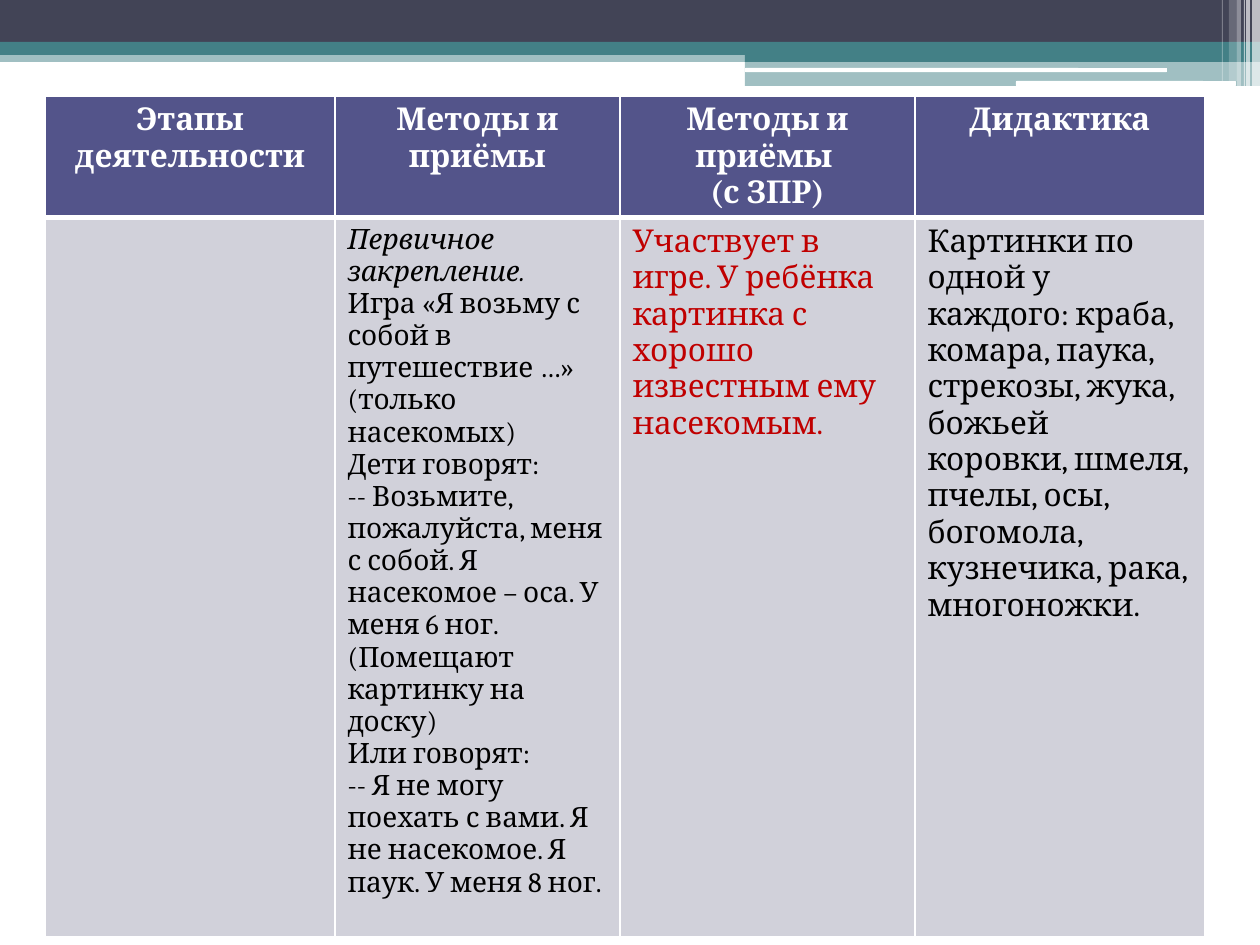
import pptx
import pptx.dml.color
import pptx.enum.shapes
import pptx.enum.text
import pptx.oxml.ns
import pptx.util
from lxml import etree

EMU_PER_PX = 914400 / 126
COLORS = {
    "white": "FFFFFF",
    "black": "000000",
    "slate": "424456",
    "teal": "438086",
    "violet": "53548A",
    "lilac": "D1D1DA",
    "red": "C00000",
}


def px(n):
    return pptx.util.Emu(round(n * EMU_PER_PX))


def rgb(name):
    return pptx.dml.color.RGBColor.from_string(COLORS[name])


def sub(parent, tag, **attrs):
    return etree.SubElement(parent, pptx.oxml.ns.qn(tag), attrs)


class Deck:
    font = "Cambria"

    def __init__(self, width, height):
        self.prs = pptx.Presentation()
        self.prs.slide_width, self.prs.slide_height = px(width), px(height)
        self.s = self.prs.slides.add_slide(self.prs.slide_layouts[6])

    def bar(self, x, y, w, h, color, opacity=100, rounded=False):
        kinds = pptx.enum.shapes.MSO_SHAPE
        kind = kinds.ROUNDED_RECTANGLE if rounded else kinds.RECTANGLE
        sp = self.s.shapes.add_shape(kind, px(x), px(y), px(w), px(h))
        sp.shadow.inherit = False
        sp.line.fill.background()
        sp.fill.solid()
        sp.fill.fore_color.rgb = rgb(color)
        if opacity < 100:
            clr = sp.fill._xPr.find(".//" + pptx.oxml.ns.qn("a:srgbClr"))
            sub(clr, "a:alpha", val=str(opacity * 1000))

    def table(self, x, y, widths, heights):
        frame = self.s.shapes.add_table(
            len(heights), len(widths), px(x), px(y), px(sum(widths)), px(sum(heights)))
        table = frame.table
        table.horz_banding = False
        for column, width in zip(table.columns, widths):
            column.width = px(width)
        for row, height in zip(table.rows, heights):
            row.height = px(height)
        return table

    def cell(self, cell, lines, fill, color, size=18, header=False, italic_lines=()):
        self.borders(cell, 3 if header else 1)
        cell.fill.solid()
        cell.fill.fore_color.rgb = rgb(fill)
        tf = cell.text_frame
        for i, line in enumerate(lines):
            p = tf.add_paragraph() if i else tf.paragraphs[0]
            align = pptx.enum.text.PP_ALIGN
            p.alignment = align.CENTER if header else align.LEFT
            r = p.add_run()
            r.text = line
            r.font.name = self.font
            r.font.size = pptx.util.Pt(size)
            r.font.bold = header
            r.font.italic = i in italic_lines
            r.font.color.rgb = rgb(color)

    def borders(self, cell, bottom):
        tcPr = cell._tc.get_or_add_tcPr()
        for side, points in (("L", 1), ("R", 1), ("T", 1), ("B", bottom)):
            ln = sub(tcPr, "a:ln" + side, w=str(points * 12700))
            sub(sub(ln, "a:solidFill"), "a:srgbClr", val=COLORS["white"])


BANDS = [
    (0, 50, 1260, 12, "teal", 50),
    (0, 0, 1260, 43, "slate"),
    (0, 42, 1260, 13, "teal"),
    (745, 49, 515, 13, "teal"),
    (745, 61, 515, 25, "teal", 50),
    (745, 68, 422, 4, "white", 100, True),
    (1016, 81, 220, 5, "white", 100, True),
]
STRIPES = [
    (1252, 8, 86, 65),
    (1246, 4, 86, 65),
    (1244, 1, 86, 60),
    (1237, 4, 86, 40),
    (1229, 8, 81, 20),
    (1222, 1, 81, 30),
]
HEADERS = [
    ["Этапы деятельности"],
    ["Методы и приёмы"],
    ["Методы и приёмы ", "(с ЗПР)"],
    ["Дидактика"],
]
METHODS = [
    "Первичное закрепление.",
    "Игра «Я возьму с собой в путешествие …» (только",
    "насекомых)",
    "Дети говорят:",
    "-- Возьмите, пожалуйста, меня с собой. Я насекомое – оса. У меня 6 ног.",
    "(Помещают картинку на доску)",
    "Или говорят:",
    "-- Я не могу поехать с вами. Я не насекомое. Я паук. У меня 8 ног.",
]
ADAPTED = ["Участвует в игре. У ребёнка картинка с хорошо известным ему насекомым."]
MATERIALS = [
    "Картинки по одной у каждого: краба, комара, паука, стрекозы, жука, "
    "божьей коровки, шмеля, пчелы, осы, богомола, кузнечика, рака, многоножки."
]


def main():
    deck = Deck(1260, 945)
    for band in BANDS:
        deck.bar(*band)
    for x, w, h, opacity in STRIPES:
        deck.bar(x, 0, w, h, "white", opacity)

    plan = deck.table(45, 96, [290, 285, 295, 290], [121, 719])
    for col, lines in enumerate(HEADERS):
        deck.cell(plan.cell(0, col), lines, "violet", "white", header=True)
    deck.cell(plan.cell(1, 0), [], "lilac", "black")
    deck.cell(plan.cell(1, 1), METHODS, "lilac", "black", size=16, italic_lines=(0,))
    deck.cell(plan.cell(1, 2), ADAPTED, "lilac", "red")
    deck.cell(plan.cell(1, 3), MATERIALS, "lilac", "black")
    deck.prs.save("out.pptx")


if __name__ == "__main__":
    main()
